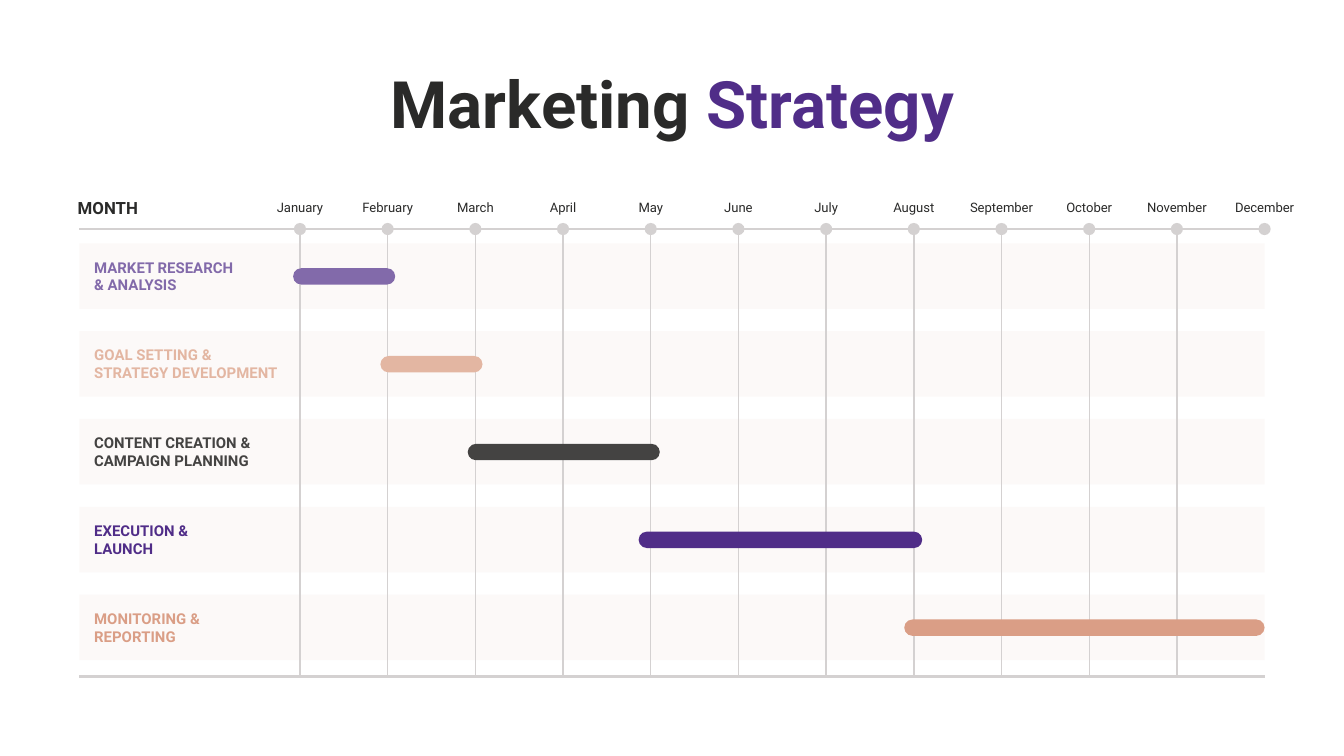
import pptx
import pptx.dml.color
import pptx.enum.shapes
import pptx.enum.text
import pptx.oxml.ns
import pptx.util
from lxml import etree

Cm = pptx.util.Cm
Pt = pptx.util.Pt
RGBColor = pptx.dml.color.RGBColor
MSO_SHAPE = pptx.enum.shapes.MSO_SHAPE
PP_ALIGN = pptx.enum.text.PP_ALIGN

INK = RGBColor(0x2A, 0x2A, 0x29)
PURPLE = RGBColor(0x50, 0x2D, 0x88)
LAVENDER = RGBColor(0x82, 0x6A, 0xAA)
PEACH = RGBColor(0xE3, 0xB6, 0xA2)
CHARCOAL = RGBColor(0x44, 0x43, 0x42)
TERRACOTTA = RGBColor(0xDA, 0x9E, 0x86)
GRID = RGBColor(0xD4, 0xD1, 0xD1)
BAND = RGBColor(0xFC, 0xF9, 0xF8)

FONT = "Roboto"
MONTHS = ["January", "February", "March", "April", "May", "June", "July",
          "August", "September", "October", "November", "December"]
TASKS = [
    (["MARKET RESEARCH", "& ANALYSIS"], LAVENDER, 5.54, 1.93),
    (["GOAL SETTING &", "STRATEGY DEVELOPMENT"], PEACH, 7.19, 1.93),
    (["CONTENT CREATION &", "CAMPAIGN PLANNING"], CHARCOAL, 8.84, 3.63),
    (["EXECUTION &", "LAUNCH"], PURPLE, 12.07, 5.36),
    (["MONITORING &", "REPORTING"], TERRACOTTA, 17.09, 6.81),
]

CHART_LEFT, CHART_RIGHT = 1.5, 23.9
AXIS_Y, BASE_Y = 4.33, 12.78
JANUARY_X = 5.67
MONTH_STEP = (CHART_RIGHT - JANUARY_X) / (len(MONTHS) - 1)
ROW_TOP, ROW_STEP, ROW_HEIGHT = 4.6, 1.66, 1.24
BAR_HEIGHT = 0.31
DOT = 0.23


def add_text(slide, left, top, width, height, paragraphs, size,
             bold=False, align=PP_ALIGN.LEFT, spacing=None):
    tb = slide.shapes.add_textbox(Cm(left), Cm(top), Cm(width), Cm(height))
    tf = tb.text_frame
    tf.word_wrap = True
    tf.auto_size = pptx.enum.text.MSO_AUTO_SIZE.SHAPE_TO_FIT_TEXT
    tf.margin_left = tf.margin_top = tf.margin_right = tf.margin_bottom = 0
    for i, runs in enumerate(paragraphs):
        p = tf.add_paragraph() if i else tf.paragraphs[0]
        p.alignment = align
        p.line_spacing = spacing
        for text, color in runs:
            r = p.add_run()
            r.text = text
            r.font.name = FONT
            r.font.size = Pt(size)
            r.font.bold = bold
            r.font.color.rgb = color


def add_shape(slide, kind, left, top, width, height, color):
    sp = slide.shapes.add_shape(kind, Cm(left), Cm(top), Cm(width), Cm(height))
    sp.shadow.inherit = False
    sp.fill.solid()
    sp.fill.fore_color.rgb = color
    sp.line.fill.background()
    return sp


def add_line(slide, x1, y1, x2, y2, weight):
    line = slide.shapes.add_connector(
        pptx.enum.shapes.MSO_CONNECTOR.STRAIGHT, Cm(x1), Cm(y1), Cm(x2), Cm(y2))
    line.line.color.rgb = GRID
    line.line.width = Pt(weight)
    etree.SubElement(line._element.spPr, pptx.oxml.ns.qn("a:effectLst"))


def add_task_row(slide, top, lines, color):
    add_shape(slide, MSO_SHAPE.RECTANGLE, CHART_LEFT, top,
              CHART_RIGHT - CHART_LEFT, ROW_HEIGHT, BAND)
    add_text(slide, 1.78, top + 0.28, 3.94, 0.69,
             [[(line, color)] for line in lines], 8, bold=True)


def add_month(slide, x, name):
    add_text(slide, x - 0.65, 3.71, 1.3, 0.3, [[(name, INK)]], 7,
             align=PP_ALIGN.CENTER, spacing=1.2)
    add_shape(slide, MSO_SHAPE.OVAL, x - DOT / 2, AXIS_Y - DOT / 2, DOT, DOT, GRID)


def add_bar(slide, left, row_top, width, color):
    bar = add_shape(slide, MSO_SHAPE.ROUNDED_RECTANGLE, left, row_top + 0.47,
                    width, BAR_HEIGHT, color)
    bar.adjustments[0] = 0.5


def main():
    prs = pptx.Presentation()
    prs.slide_width, prs.slide_height = Cm(25.4), Cm(14.29)
    s = prs.slides.add_slide(prs.slide_layouts[6])

    add_text(s, 1.8, 1.37, 21.82, 1.35,
             [[("Marketing ", INK), ("Strategy", PURPLE)]], 35,
             bold=True, align=PP_ALIGN.CENTER, spacing=0.9)

    row_tops = [ROW_TOP + i * ROW_STEP for i in range(len(TASKS))]
    for top, (lines, color, _, _) in zip(row_tops, TASKS):
        add_task_row(s, top, lines, color)

    add_text(s, 1.47, 3.66, 2.06, 0.38, [[("MONTH", INK)]], 9, bold=True, spacing=1.2)
    for y in (AXIS_Y, BASE_Y):
        add_line(s, CHART_LEFT, y, CHART_RIGHT, y, 1.5)
    for i, name in enumerate(MONTHS):
        x = JANUARY_X + i * MONTH_STEP
        add_month(s, x, name)
        if name != MONTHS[-1]:
            add_line(s, x, AXIS_Y + DOT / 2, x, BASE_Y, 0.75)

    for top, (_, color, left, width) in zip(row_tops, TASKS):
        add_bar(s, left, top, width, color)

    prs.save("out.pptx")


if __name__ == "__main__":
    main()
